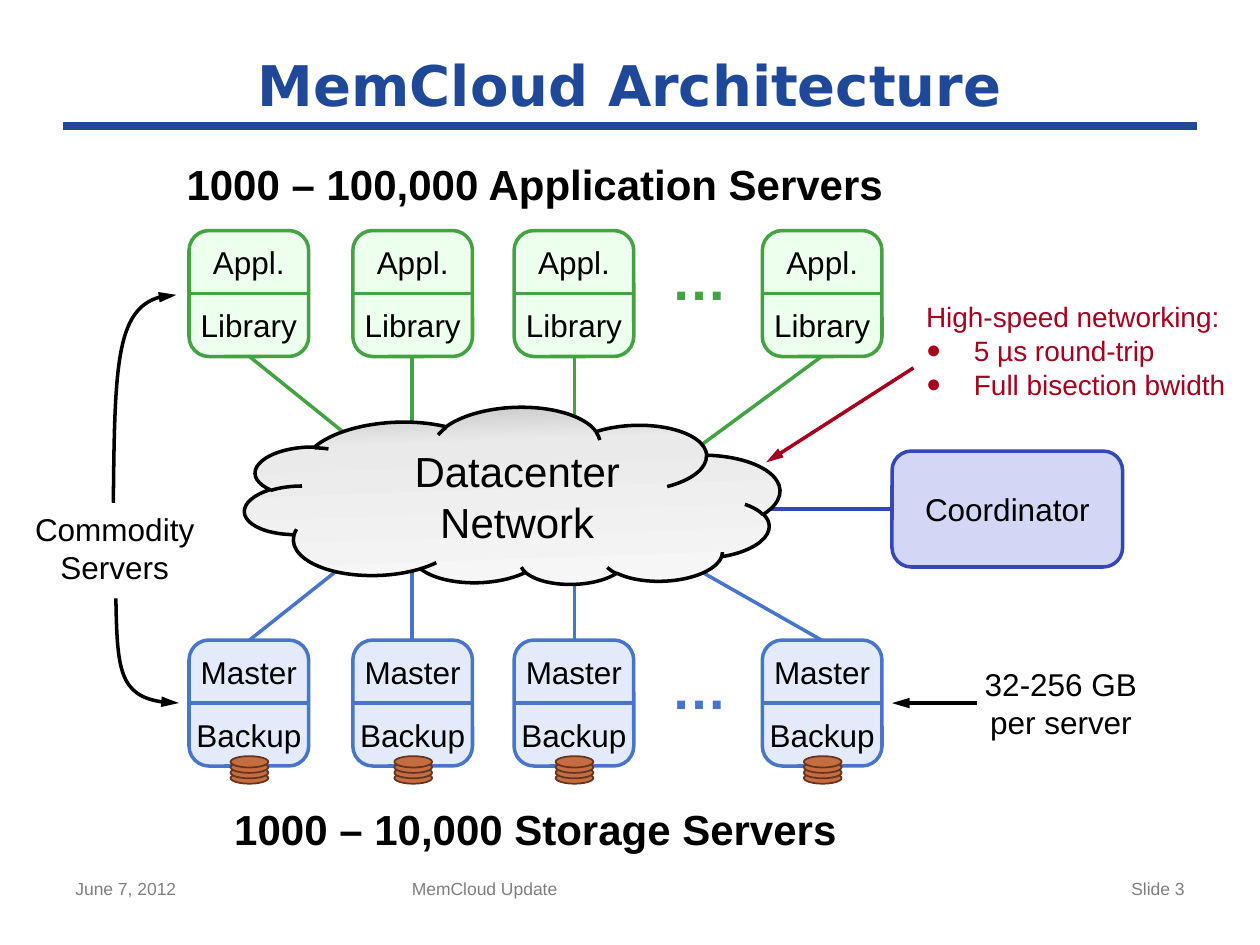
"""Build the storage cluster architecture slide."""
from copy import deepcopy

from lxml import etree
from pptx import Presentation
from pptx.dml.color import RGBColor
from pptx.enum.shapes import MSO_CONNECTOR, MSO_SHAPE
from pptx.enum.text import MSO_ANCHOR, PP_ALIGN
from pptx.oxml.ns import qn
from pptx.util import Inches, Pt

STRAIGHT = MSO_CONNECTOR.STRAIGHT
ROUNDED, OVAL, CLOUD = MSO_SHAPE.ROUNDED_RECTANGLE, MSO_SHAPE.OVAL, MSO_SHAPE.CLOUD
LEFT, CENTER, RIGHT = PP_ALIGN.LEFT, PP_ALIGN.CENTER, PP_ALIGN.RIGHT
MIDDLE = MSO_ANCHOR.MIDDLE

BLACK = RGBColor(0x00, 0x00, 0x00)
GRAY = RGBColor(0x7F, 0x7F, 0x7F)
NAVY = RGBColor(0x1F, 0x48, 0x99)
INDIGO = RGBColor(0x34, 0x47, 0xB8)
LAVENDER = RGBColor(0xD2, 0xD7, 0xF6)
BLUE = RGBColor(0x49, 0x74, 0xCB)
PALE_BLUE = RGBColor(0xE3, 0xEA, 0xF9)
GREEN = RGBColor(0x43, 0xA3, 0x43)
PALE_GREEN = RGBColor(0xED, 0xFF, 0xED)
COPPER = RGBColor(0xC5, 0x6D, 0x41)
BROWN = RGBColor(0x64, 0x35, 0x1E)
CRIMSON = RGBColor(0xA5, 0x00, 0x1E)
CLOUD_STOPS = [
    (0, RGBColor(0xF8, 0xF8, 0xF8)),
    (0.76, RGBColor(0xEA, 0xEA, 0xEA)),
    (1, RGBColor(0xC0, 0xC0, 0xC0)),
]


def write(paragraph, text, size, color=BLACK, align=CENTER, bold=False, face="Arial"):
    paragraph.text = text
    paragraph.alignment = align
    font_format = {"size": Pt(size), "bold": bold, "name": face}
    for run in paragraph.runs:
        for attribute, value in font_format.items():
            setattr(run.font, attribute, value)
        run.font.color.rgb = color


def outline(item, color, width=2, arrow=False):
    item.line.color.rgb = color
    item.line.width = Pt(width)
    properties = item._element.spPr
    if arrow:
        etree.SubElement(properties.find(qn("a:ln")), qn("a:tailEnd"), type="triangle", w="med", len="lg")
    etree.SubElement(properties, qn("a:effectLst"))


presentation = Presentation()
presentation.slide_width, presentation.slide_height = Inches(10), Inches(7.5)
slide = presentation.slides.add_slide(presentation.slide_layouts[1])
shapes = slide.shapes

title, networking = slide.placeholders
placements = [(title, (0.5, 0.33, 9, 0.67)), (networking, (7.25, 2.33, 2.67, 1))]
for placeholder, place in placements:
    for side, length in zip(("left", "top", "width", "height"), place):
        setattr(placeholder, side, Inches(length))
title.text_frame.vertical_anchor = MIDDLE
write(title.text_frame.paragraphs[0], "MemCloud Architecture", 32, NAVY, bold=True, face="DejaVu Sans")

facts = ["High-speed networking:", "5 µs round-trip", "Full bisection bwidth"]
networking.text_frame.text = "\n".join(facts)
for index, (paragraph, fact) in enumerate(zip(networking.text_frame.paragraphs, facts)):
    write(paragraph, fact, 16, CRIMSON, LEFT)
    paragraph.space_before = Pt(0)
    properties = paragraph._p.get_or_add_pPr()
    indent = Inches(0.38) if index else 0
    properties.set("marL", str(indent))
    properties.set("indent", str(-indent))
    if index:
        bullet_color = etree.SubElement(properties, qn("a:buClr"))
        etree.SubElement(bullet_color, qn("a:srgbClr"), val=str(CRIMSON))
        etree.SubElement(properties, qn("a:buSzPct"), val="90000")
        etree.SubElement(properties, qn("a:buFont"), typeface="Arial")
        etree.SubElement(properties, qn("a:buChar"), char="●")
    else:
        etree.SubElement(properties, qn("a:buNone"))

links = [
    ((0.5, 1), (9.5, 1), NAVY, 4.5, False),
    ((7.08, 4.04), (6.01, 4.04), INDIGO, 2, False),
    ((3.27, 4.5), (3.27, 5.08), BLUE, 2, False),
    ((4.56, 4.58), (4.56, 5.08), BLUE, 2, False),
    ((5.5, 4.5), (6.52, 5.08), BLUE, 2, False),
    ((2.71, 4.5), (1.98, 5.08), BLUE, 2, False),
    ((3.27, 2.83), (3.27, 3.42), GREEN, 2, False),
    ((4.56, 2.83), (4.56, 3.42), GREEN, 2, False),
    ((6.52, 2.83), (5.5, 3.58), GREEN, 2, False),
    ((1.98, 2.83), (2.8, 3.49), GREEN, 2, False),
    ((7.75, 5.58), (7.08, 5.58), BLACK, 2, True),
    ((7.25, 2.92), (6.08, 3.67), CRIMSON, 2, True),
]
for start, end, color, width, arrow in links:
    link = shapes.add_connector(STRAIGHT, *map(Inches, start + end))
    outline(link, color, width, arrow)

tiers = [
    (5.08, ("Master", "Backup"), BLUE, PALE_BLUE, True),
    (1.83, ("Appl.", "Library"), GREEN, PALE_GREEN, False),
]
for top, roles, color, tint, has_disks in tiers:
    for left in (1.5, 2.8, 4.08, 6.05):
        server = shapes.add_group_shape().shapes
        case = server.add_shape(ROUNDED, Inches(left), Inches(top), Inches(0.95), Inches(1))
        outline(case, color)
        case.fill.solid()
        case.fill.fore_color.rgb = tint
        for row, role in enumerate(roles):
            label = server.add_textbox(
                Inches(left), Inches(top + 0.1 + row * 0.5), Inches(0.95), Inches(0.3)
            ).text_frame
            label.word_wrap = True
            for margin in ("margin_left", "margin_top", "margin_right", "margin_bottom"):
                setattr(label, margin, 0)
            write(label.paragraphs[0], role, 18)
        middle = Inches(top + 0.5)
        divider = server.add_connector(STRAIGHT, Inches(left), middle, Inches(left + 0.95), middle)
        outline(divider, color)
        for level in range(4 if has_disks else 0):
            disk = server.add_shape(
                OVAL, Inches(left + 0.33), Inches(6.13 - level * 0.043), Inches(0.3), Inches(0.09)
            )
            outline(disk, BROWN, 1)
            disk.fill.solid()
            disk.fill.fore_color.rgb = COPPER

network = shapes.add_shape(CLOUD, Inches(1.94), Inches(3.24), Inches(4.25), Inches(1.42))
network.rotation = 358
network._element.spPr.find(qn("a:xfrm")).set("flipV", "1")
outline(network, BLACK)
network.fill.gradient()
network.fill.gradient_angle = 270
stop_list = network._element.spPr.find(".//" + qn("a:gsLst"))
stop_list.append(deepcopy(stop_list[0]))
for stop, (position, color) in zip(network.fill.gradient_stops, CLOUD_STOPS):
    stop.position = position
    stop.color.rgb = color

coordinator = shapes.add_shape(ROUNDED, Inches(7.08), Inches(3.58), Inches(1.83), Inches(0.92))
outline(coordinator, INDIGO)
coordinator.fill.solid()
coordinator.fill.fore_color.rgb = LAVENDER
coordinator.text_frame.vertical_anchor = MIDDLE
write(coordinator.text_frame.paragraphs[0], "Coordinator", 18)

captions = [
    ((0.5, 6.92, 2.33, 0.43), "June 7, 2012", 10, GRAY, LEFT, False, True),
    ((3.17, 6.92, 3.75, 0.43), "MemCloud Update", 10, GRAY, LEFT, False, True),
    ((7.17, 6.92, 2.33, 0.43), "Slide 3", 10, GRAY, RIGHT, False, True),
    ((5.23, 5.14, 0.65, 0.64), "…", 32, BLUE, CENTER, True, False),
    ((5.23, 1.89, 0.65, 0.64), "…", 32, GREEN, CENTER, True, False),
    ((2.98, 3.49, 2.25, 0.91), "Datacenter\nNetwork", 24, BLACK, CENTER, False, True),
    ((1.5, 6.33, 5.5, 0.5), "1000 – 10,000 Storage Servers", 24, BLACK, CENTER, True, True),
    ((1.33, 1.21, 5.83, 0.5), "1000 – 100,000 Application Servers", 24, BLACK, CENTER, True, True),
    ((0.17, 4, 1.48, 0.71), "Commodity\nServers", 18, BLACK, CENTER, False, False),
    ((7.71, 5.23, 1.42, 0.71), "32-256 GB\nper server", 18, BLACK, CENTER, False, False),
]
for place, text, size, color, align, bold, wrap in captions:
    caption = shapes.add_textbox(*map(Inches, place)).text_frame
    caption.word_wrap = wrap
    write(caption.paragraphs[0], text, size, color, align, bold)

server_curves = [
    [(0.9, 3.99), (0.91, 2.88), (0.93, 2.34), (1.4, 2.34)],
    [(0.92, 4.75), (0.93, 5.31), (0.95, 5.58), (1.42, 5.58)],
]
for curve in server_curves:
    start, *controls = [(Inches(x), Inches(y)) for x, y in curve]
    builder = shapes.build_freeform(*start)
    builder.add_line_segments(controls, close=False)
    pointer = builder.convert_to_shape()
    pointer.fill.background()
    outline(pointer, BLACK, arrow=True)
    route = pointer._element.spPr.find(".//" + qn("a:path"))
    bezier = etree.SubElement(route, qn("a:cubicBezTo"))
    for segment in route.findall(qn("a:lnTo")):
        bezier.append(segment[0])
        route.remove(segment)

presentation.save("out.pptx")
